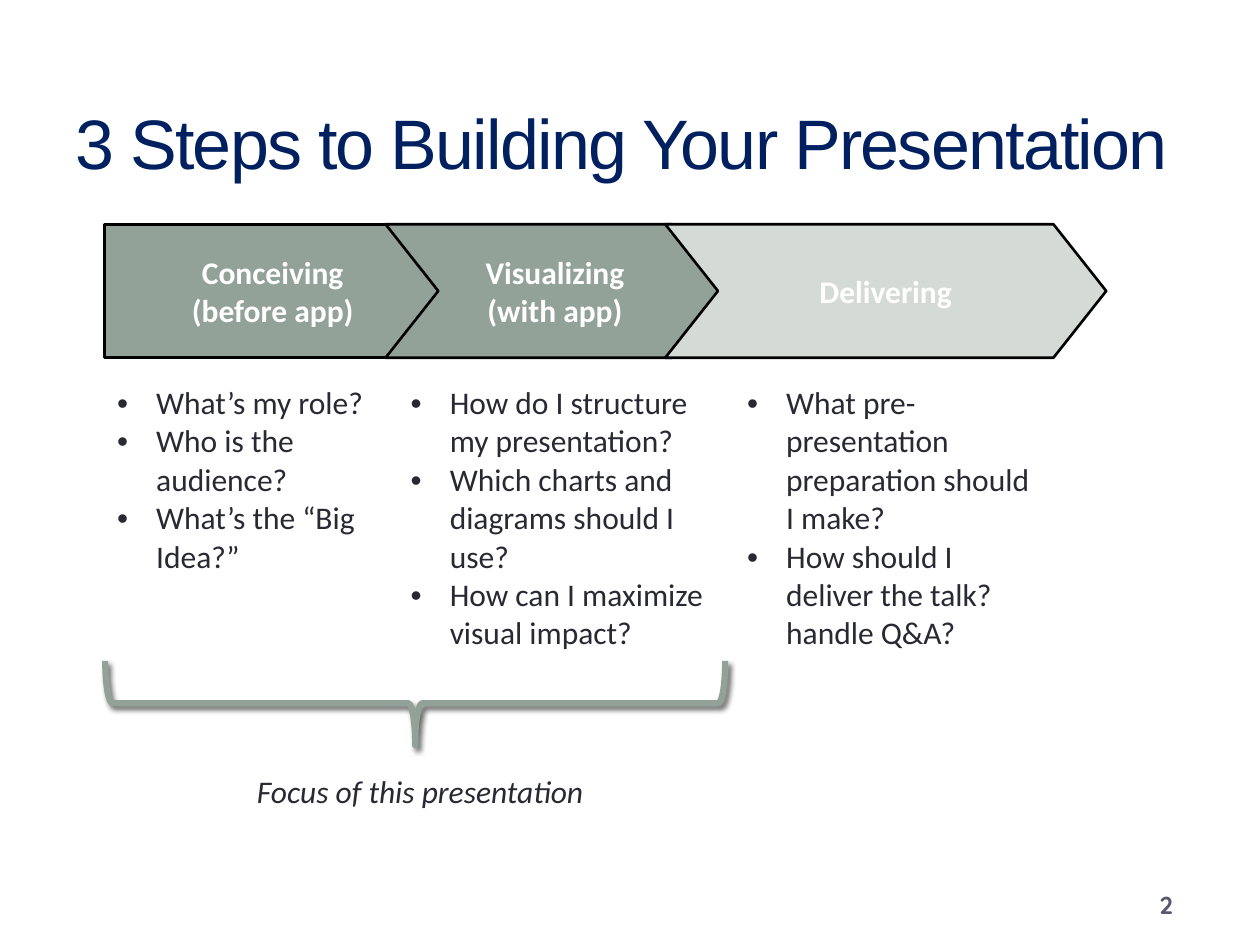
from dataclasses import dataclass

from pptx import Presentation
from pptx import util as u
from pptx.dml.color import RGBColor
from pptx.enum import shapes, text
from pptx.oxml import ns
from lxml import etree

NAVY = RGBColor(0x00, 0x20, 0x60)
SAGE = RGBColor(0x93, 0xA2, 0x99)
PALE_SAGE = RGBColor(0xD4, 0xDA, 0xD6)
INK = RGBColor(0x29, 0x29, 0x34)
SLATE = RGBColor(0x57, 0x57, 0x6E)
WHITE = RGBColor(0xFF, 0xFF, 0xFF)
BLACK = RGBColor(0x00, 0x00, 0x00)

BODY = {"name": "Calibri", "size": u.Pt(18)}
LEFT, STEP_TOP, STEP_HEIGHT = 0.83, 1.78, 1.06
BULLET_INDENT = u.Inches(0.31)


@dataclass
class Step:
    label: str
    left: float
    width: float
    notch: float
    fill: RGBColor
    column_width: float
    questions: list[str]


STEPS = [
    Step("Conceiving\v(before app)", LEFT, 2.67, 0, SAGE, 2.33,
         ["What’s my role?", "Who is the audience?", "What’s the “Big Idea?”"]),
    Step("Visualizing (with app)", 3.06, 2.69, 0.395, SAGE, 2.67,
         ["How do I structure my presentation?",
          "Which charts and diagrams should I use?",
          "How can I maximize visual impact?"]),
    Step("Delivering", 5.28, 3.5, 0.395, PALE_SAGE, 2.5,
         ["What pre-presentation preparation should I make?",
          "How should I deliver the talk? handle Q&A?"]),
]


def add_element(parent, tag: str, **attributes):
    element = etree.SubElement(parent, ns.qn(tag))
    for name, value in attributes.items():
        element.set(name, str(value))
    return element


def format_font(font, color: RGBColor, **values) -> None:
    for name, value in values.items():
        setattr(font, name, value)
    font.color.rgb = color


def write_text(frame, content: str, color: RGBColor,
               alignment=text.PP_ALIGN.CENTER, **values) -> None:
    frame.word_wrap = True
    paragraph = frame.paragraphs[0]
    paragraph.text = content
    paragraph.alignment = alignment
    for run in paragraph.runs:
        format_font(run.font, color, **values)


def add_label(slide, box: tuple, content: str, color: RGBColor, anchor, **values) -> None:
    shape = slide.shapes.add_textbox(*map(u.Inches, box))
    write_text(shape.text_frame, content, color, **values)
    shape.text_frame.vertical_anchor = anchor


def add_step(slide, step: Step) -> None:
    shape = slide.shapes.add_shape(
        shapes.MSO_SHAPE.CHEVRON, u.Inches(step.left), u.Inches(STEP_TOP),
        u.Inches(step.width), u.Inches(STEP_HEIGHT))
    shape.adjustments[0] = step.notch
    shape.shadow.inherit = False
    shape.fill.solid()
    shape.fill.fore_color.rgb = step.fill
    shape.line.color.rgb = BLACK
    shape.line.width = u.Pt(1.5)
    shape.text_frame.vertical_anchor = text.MSO_ANCHOR.MIDDLE
    write_text(shape.text_frame, step.label, WHITE, bold=True, **BODY)


def fill_cell(cell, questions: list[str]) -> None:
    cell.text = "\n".join(questions)
    for paragraph in cell.text_frame.paragraphs:
        properties = paragraph._p.get_or_add_pPr()
        properties.set("marL", str(BULLET_INDENT))
        properties.set("indent", str(-BULLET_INDENT))
        add_element(properties, "a:buFont", typeface="Arial")
        add_element(properties, "a:buChar", char="•")
        for run in paragraph.runs:
            format_font(run.font, INK, bold=False, **BODY)
    # Borders come before the fill in the cell properties
    cell_properties = cell._tc.get_or_add_tcPr()
    for side in ("L", "R", "T", "B"):
        border = add_element(cell_properties, f"a:ln{side}", w=u.Pt(1))
        add_element(add_element(border, "a:solidFill"), "a:srgbClr", val=WHITE)
    cell.fill.solid()
    cell.fill.fore_color.rgb = WHITE


def add_questions(slide, steps: list[Step]) -> None:
    width = sum(step.column_width for step in steps)
    table = slide.shapes.add_table(
        1, len(steps), u.Inches(LEFT), u.Inches(3), u.Inches(width), u.Inches(2.8)).table
    table.first_row = table.horz_banding = False
    for column, step in enumerate(steps):
        table.columns[column].width = u.Inches(step.column_width)
        fill_cell(table.cell(0, column), step.questions)


def add_brace(slide) -> None:
    brace = slide.shapes.add_shape(
        shapes.MSO_SHAPE.LEFT_BRACE, u.Inches(2.96), u.Inches(3.12),
        u.Inches(0.67), u.Inches(4.92))
    brace.rotation = 270
    brace.fill.background()
    brace.line.color.rgb = SAGE
    brace.line.width = u.Pt(3.5)
    brace.shadow.inherit = False
    effects = brace._element.spPr.find(ns.qn("a:effectLst"))
    shadow = add_element(effects, "a:outerShdw", blurRad=u.Pt(3), dist=u.Pt(2),
                         dir=45 * 60000, rotWithShape=0)
    shadow_color = add_element(shadow, "a:srgbClr", val=BLACK)
    add_element(shadow_color, "a:alpha", val=60000)


def main() -> None:
    presentation = Presentation()
    presentation.slide_width = u.Inches(10)
    presentation.slide_height = u.Inches(7.5)
    slide = presentation.slides.add_slide(presentation.slide_layouts[5])

    # Title
    title = slide.shapes.title
    title.left, title.top, title.width, title.height = map(u.Inches, (0.5, 0.58, 9, 1.08))
    title.text_frame.vertical_anchor = text.MSO_ANCHOR.MIDDLE
    write_text(title.text_frame, "3 Steps to Building Your Presentation", NAVY,
               text.PP_ALIGN.LEFT, name="Arial", size=u.Pt(40))
    title.text_frame.paragraphs[0].runs[0]._r.get_or_add_rPr().set("spc", "-100")

    # Slide number
    add_label(slide, (8.67, 7, 1.17, 0.36), "2", SLATE, text.MSO_ANCHOR.MIDDLE,
              name="Quicksand", size=u.Pt(14), bold=True)

    # Questions under the process arrows
    add_questions(slide, STEPS)
    for step in STEPS:
        add_step(slide, step)

    # Focus of the talk
    add_brace(slide)
    add_label(slide, (0.92, 6.08, 4.83, 0.4), "Focus of this presentation", INK,
              text.MSO_ANCHOR.TOP, italic=True, **BODY)

    presentation.save("out.pptx")


if __name__ == "__main__":
    main()
